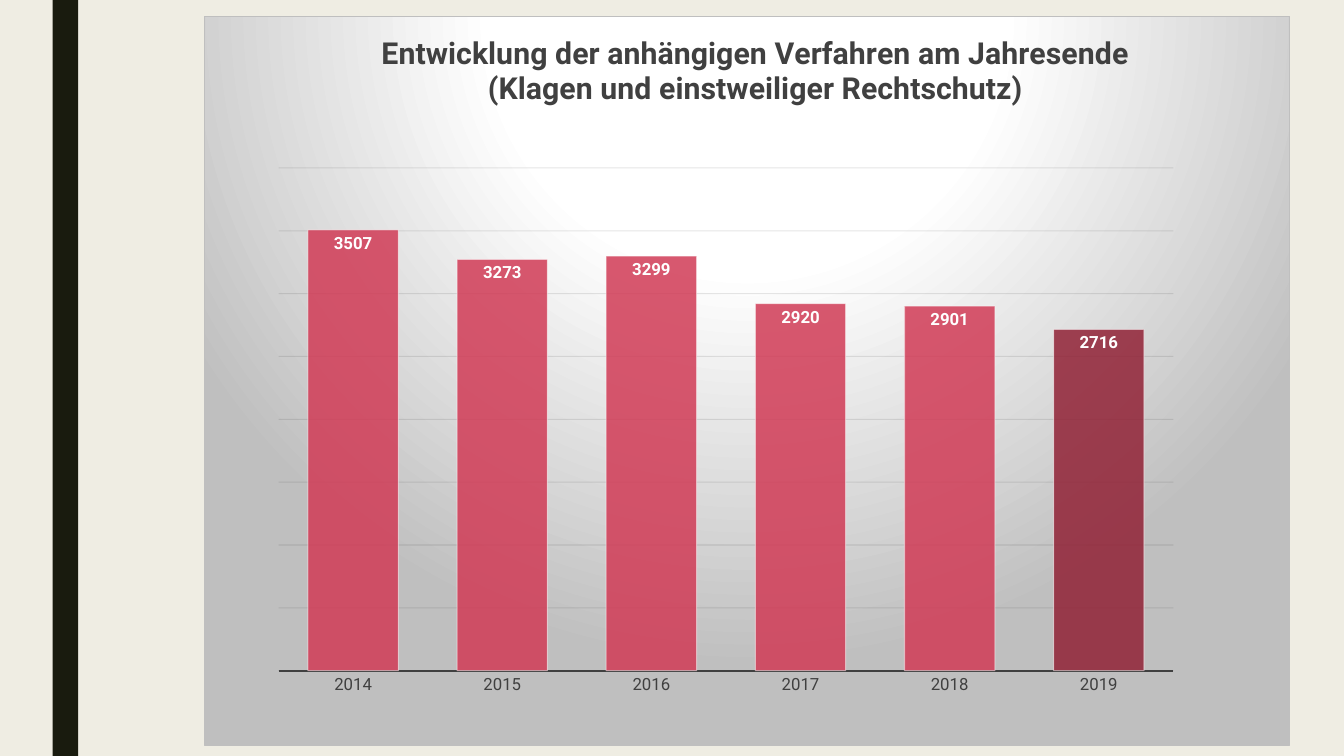
from pptx import Presentation
from pptx import util as u
from pptx.chart.data import CategoryChartData
from pptx.dml.color import RGBColor
from pptx.enum import chart as charts, shapes
from pptx.oxml import parse_xml
from pptx.oxml.ns import nsdecls, qn

COLORS = {
    "page": "EFEDE3", "stripe": "191B0E", "bar": "D13B56", "latest": "912236",
    "text": "404040", "grid": "0D0D0D", "white": "FFFFFF", "gray": "BFBFBF",
}
YEARS = range(2014, 2020)
PENDING = (3507, 3273, 3299, 2920, 2901, 2716)
TITLE = ("Entwicklung der anhängigen Verfahren am Jahresende",
         "(Klagen und einstweiliger Rechtschutz)")


def rgb(name):
    return RGBColor.from_string(COLORS[name])


def style_font(font, size, color="text", bold=False):
    font.name, font.size, font.bold = "Roboto", u.Pt(size), bold
    font.color.rgb = rgb(color)


def write(frame, content, **style):
    """Put lines of text in a frame, one paragraph each."""
    for number, line in enumerate(content):
        para = frame.add_paragraph() if number else frame.paragraphs[0]
        span = para.add_run()
        span.text = line
        style_font(span.font, **style)


def set_alpha(fill, percent):
    fill.find(qn("a:srgbClr")).append(
        parse_xml(f'<a:alpha {nsdecls("a")} val="{percent * 1000}"/>'))


def style_line(line, color, width, percent=100):
    line.color.rgb = rgb(color)
    line.width = u.Pt(width)
    if percent < 100:
        set_alpha(line.fill._xPr.find(qn("a:solidFill")), percent)


def place(part, index, **fractions):
    """Give a chart part a manual layout as fractions of the chart."""
    old = part.find(qn("c:layout"))
    if old is not None:
        part.remove(old)
    target = '<c:layoutTarget val="inner"/>' if "w" in fractions else ""
    modes = "".join(f'<c:{key}Mode val="edge"/>' for key in "xy")
    sizes = "".join(f'<c:{key} val="{val}"/>' for key, val in fractions.items())
    part.insert(index, parse_xml(
        f'<c:layout {nsdecls("c")}><c:manualLayout>{target}{modes}{sizes}'
        '</c:manualLayout></c:layout>'))


class SlideBuilder:
    def __init__(self, deck):
        self.page = deck.slides.add_slide(deck.slide_layouts[6])
        fill = self.page.background.fill
        fill.solid()
        fill.fore_color.rgb = rgb("page")

    def rectangle(self, left, top, width, height, color):
        box = self.page.shapes.add_shape(
            shapes.MSO_SHAPE.RECTANGLE, *map(u.Cm, (left, top, width, height)))
        box.shadow.inherit = False
        box.fill.solid()
        box.fill.fore_color.rgb = rgb(color)
        box.line.fill.background()

    def column_chart(self, left, top, width, height):
        data = CategoryChartData()
        data.categories = [str(year) for year in YEARS]
        data.add_series("Anhängige Verfahren", PENDING)
        chart = self.page.shapes.add_chart(
            charts.XL_CHART_TYPE.COLUMN_CLUSTERED,
            *map(u.Cm, (left, top, width, height)), data).chart
        chart.has_legend = False
        style_font(chart.font, 10)
        self.title(chart)
        self.axes(chart)
        self.columns(chart.plots[0])
        place(chart._chartSpace.chart.plotArea, 0, x=0.068, y=0.208, w=0.825, h=0.69)
        self.backdrop(chart)

    def title(self, chart):
        write(chart.chart_title.text_frame, TITLE, size=21.6, bold=True)
        place(chart.chart_title._element, 1, x=0.16, y=0.02)

    def axes(self, chart):
        years, values = chart.category_axis, chart.value_axis
        years.major_tick_mark = charts.XL_TICK_MARK.NONE
        style_font(years.tick_labels.font, 12)
        style_line(years.format.line, "text", 1.5)
        values.minimum_scale, values.maximum_scale = 0, 4000
        values.major_unit = 500
        values.visible = False
        style_line(values.major_gridlines.format.line, "grid", 0.75, 10)

    def columns(self, plot):
        plot.gap_width = 65
        plot.vary_by_categories = False
        series = plot.series[0]
        latest = series.points[len(PENDING) - 1]
        for part, color in ((series, "bar"), (latest, "latest")):
            fill = part.format.fill
            fill.solid()
            fill.fore_color.rgb = rgb(color)
            set_alpha(fill._xPr.find(qn("a:solidFill")), 85)
            style_line(part.format.line, "white", 0.75, 50)
        labels = series.data_labels
        labels.show_value = True
        labels.position = charts.XL_LABEL_POSITION.INSIDE_END
        style_font(labels.font, 12, "white", bold=True)

    def backdrop(self, chart):
        stops = "".join(
            f'<a:gs pos="{pos * 1000}"><a:srgbClr val="{COLORS[name]}"/></a:gs>'
            for pos, name in ((0, "white"), (39, "white"), (100, "gray")))
        chart._chartSpace.chart.addnext(parse_xml(
            f'<c:spPr {nsdecls("c", "a")}><a:gradFill><a:gsLst>{stops}</a:gsLst>'
            '<a:path path="circle"><a:fillToRect l="50000" t="-80000" r="50000" '
            'b="180000"/></a:path></a:gradFill><a:ln w="9525"><a:solidFill>'
            f'<a:srgbClr val="{COLORS["gray"]}"/></a:solidFill></a:ln></c:spPr>'))


def main():
    deck = Presentation()
    deck.slide_width, deck.slide_height = u.Cm(33.87), u.Cm(19.05)
    builder = SlideBuilder(deck)
    # Stripe at the left edge
    builder.rectangle(1.33, 0, 0.64, 19.05, "stripe")
    # Pending cases per year
    builder.column_chart(5.15, 0.4, 27.36, 18.39)
    deck.save("out.pptx")


if __name__ == "__main__":
    main()
